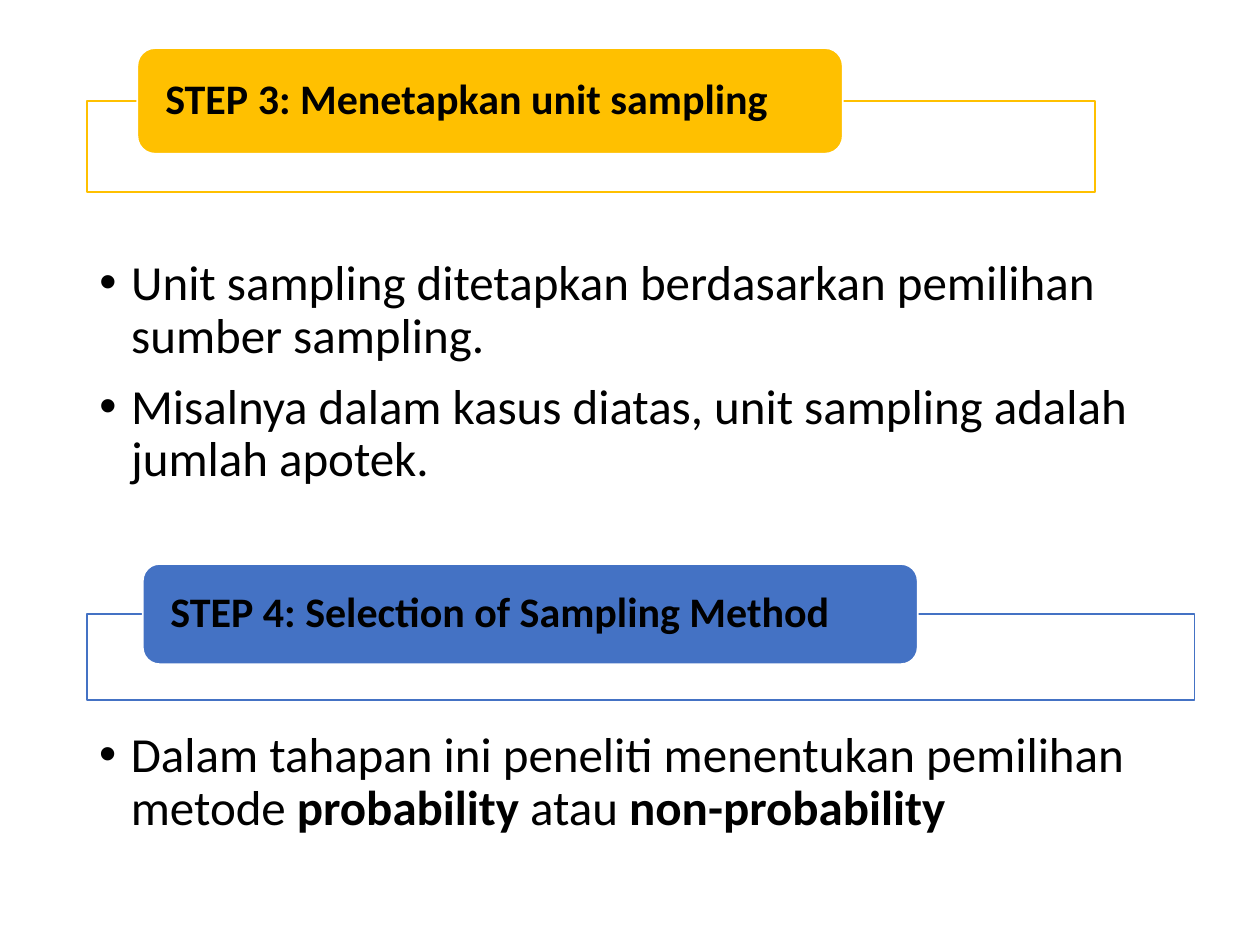
from dataclasses import dataclass

from lxml import etree
from pptx import Presentation
from pptx.dml.color import RGBColor
from pptx.enum.shapes import MSO_SHAPE
from pptx.enum.text import MSO_ANCHOR, MSO_AUTO_SIZE, PP_ALIGN
from pptx.oxml.ns import qn
from pptx.util import Cm, Pt

RECTANGLE = MSO_SHAPE.RECTANGLE
ROUNDED = MSO_SHAPE.ROUNDED_RECTANGLE
MIDDLE = MSO_ANCHOR.MIDDLE
TOP = MSO_ANCHOR.TOP
NO_AUTOFIT = MSO_AUTO_SIZE.NONE
LEFT = PP_ALIGN.LEFT


@dataclass(frozen=True)
class Theme:
    font: str = "Calibri"
    ink: str = "000000"
    paper: str = "FFFFFF"
    amber: str = "FFC000"
    blue: str = "4472C4"
    heading_size: int = 24
    body_size: int = 28
    line_width: int = 1
    line_spacing: float = 0.9
    paragraph_gap: int = 10
    indent: float = 0.64
    frame_alpha: int = 90000


def write_text(paragraph, pieces, *, theme, size, bullet=False, space_before=0):
    properties = paragraph._p.get_or_add_pPr()
    if bullet:
        properties.set("marL", str(Cm(theme.indent)))
        properties.set("indent", str(-Cm(theme.indent)))
        etree.SubElement(properties, qn("a:buFont"), typeface="Arial")
        etree.SubElement(properties, qn("a:buChar"), char="•")
    paragraph.alignment = LEFT
    paragraph.line_spacing = theme.line_spacing
    paragraph.space_before = Pt(space_before)
    for wording, bold in pieces:
        run = paragraph.add_run()
        run.text = wording
        run.font.name = theme.font
        run.font.size = Pt(size)
        run.font.bold = bold
        run.font.color.rgb = RGBColor.from_string(theme.ink)


class StepSlide:
    def __init__(self, slide, theme):
        self.slide = slide
        self.theme = theme

    def box(self, group, kind, bounds, fill, line):
        shape = group.shapes.add_shape(kind, *map(Cm, bounds))
        shape.shadow.inherit = False
        shape.fill.solid()
        shape.fill.fore_color.rgb = RGBColor.from_string(fill)
        shape.line.color.rgb = RGBColor.from_string(line)
        shape.line.width = Pt(self.theme.line_width)
        return shape

    def step(self, heading, colour, frame_bounds, tab_bounds):
        group = self.slide.shapes.add_group_shape()
        frame = self.box(group, RECTANGLE, frame_bounds, self.theme.paper, colour)
        frame_colour = frame.fill._xPr.find(qn("a:solidFill"))[0]
        etree.SubElement(frame_colour, qn("a:alpha"), val=str(self.theme.frame_alpha))
        tab = self.box(group, ROUNDED, tab_bounds, colour, self.theme.paper)
        label = tab.text_frame
        label.word_wrap = True
        label.vertical_anchor = MIDDLE
        label.margin_left = label.margin_right = Cm(0.46)
        label.margin_top = label.margin_bottom = 0
        write_text(label.paragraphs[0], [(heading, True)], theme=self.theme,
                   size=self.theme.heading_size)

    def fill_bullets(self, body, points):
        body.word_wrap = True
        body.auto_size = NO_AUTOFIT
        body.vertical_anchor = TOP
        for index, pieces in enumerate(points):
            paragraph = body.add_paragraph() if index else body.paragraphs[0]
            write_text(paragraph, pieces, theme=self.theme, size=self.theme.body_size,
                       bullet=True, space_before=self.theme.paragraph_gap if index else 0)

    def body_bullets(self, bounds, points):
        body = self.slide.placeholders[1]
        body.left, body.top, body.width, body.height = map(Cm, bounds)
        self.fill_bullets(body.text_frame, points)

    def bullets(self, bounds, points):
        note = self.slide.shapes.add_textbox(*map(Cm, bounds))
        self.fill_bullets(note.text_frame, points)


def main():
    theme = Theme()
    deck = Presentation()
    deck.slide_width, deck.slide_height = Cm(25.4), Cm(19.05)
    slide = deck.slides.add_slide(deck.slide_layouts[1])
    unused_title = slide.shapes.title.element
    unused_title.getparent().remove(unused_title)

    page = StepSlide(slide, theme)
    margin, text_width = 1.75, 21.9
    page.body_bullets((margin, 5.08, text_width, 5.08), [
        [("Unit sampling ditetapkan berdasarkan pemilihan sumber sampling.", False)],
        [("Misalnya dalam kasus diatas, unit sampling adalah jumlah apotek.", False)],
    ])
    page.step("STEP 3: Menetapkan unit sampling", theme.amber,
              (margin, 2.03, 20.32, 1.84), (2.77, 0.97, 14.22, 2.13))
    page.step("STEP 4: Selection of Sampling Method", theme.blue,
              (margin, 12.38, 22.33, 1.73), (2.88, 11.37, 15.62, 2.02))
    page.bullets((margin, 14.6, text_width, 4.27), [
        [("Dalam tahapan ini peneliti menentukan pemilihan metode ", False),
         ("probability ", True), ("atau ", False), ("non-probability", True)],
    ])
    deck.save("out.pptx")


if __name__ == "__main__":
    main()
